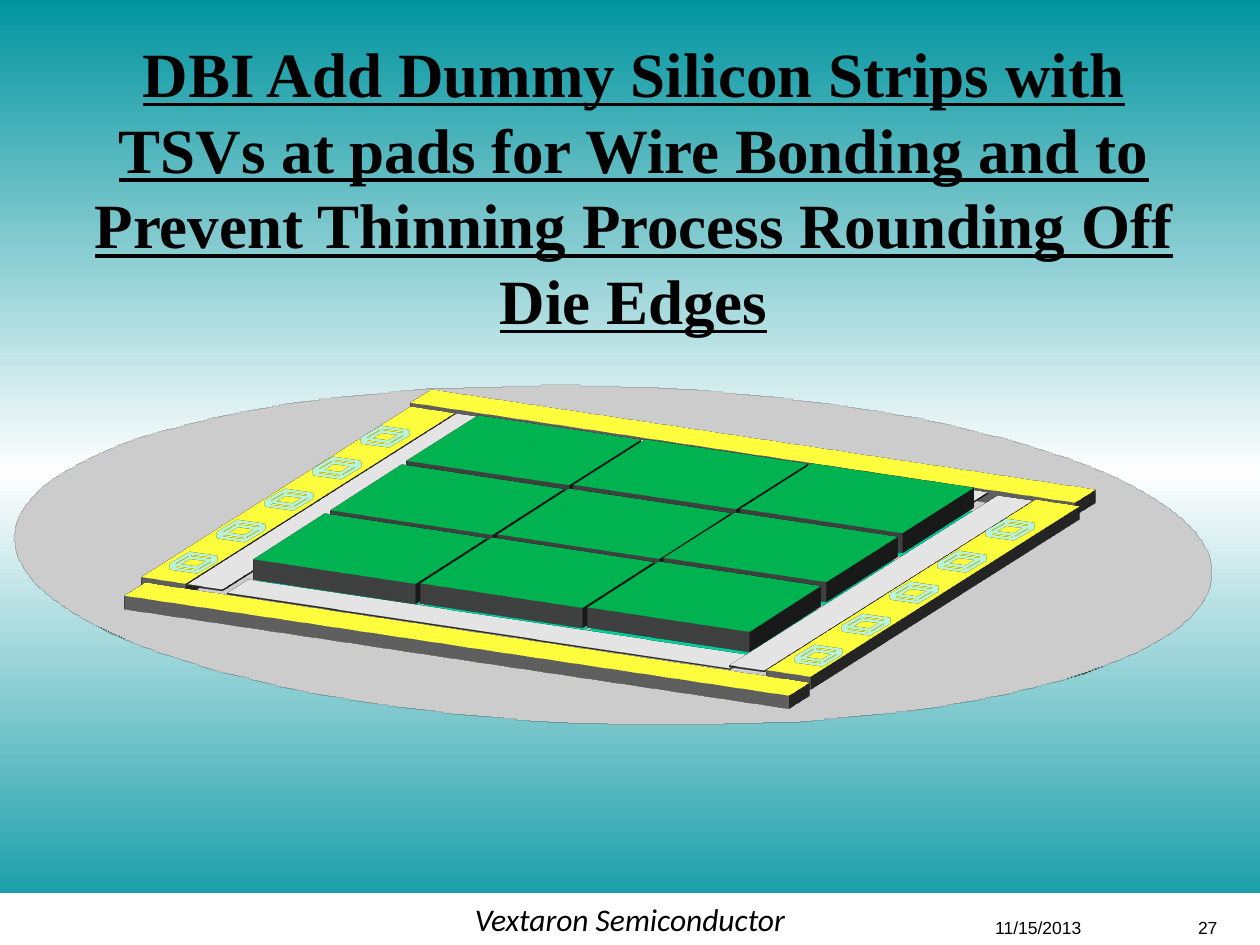
from lxml import etree
from copy import deepcopy

from pptx import Presentation
from pptx.dml.color import RGBColor
from pptx.enum import shapes, text
from pptx.oxml.ns import qn
from pptx.util import Inches, Pt

TEAL = RGBColor(0x01, 0x94, 0x9F)
WHITE = RGBColor(0xFF, 0xFF, 0xFF)
BLACK = RGBColor(0, 0, 0)
WAFER = RGBColor(0xC9, 0xC9, 0xC9)
YELLOW = RGBColor(0xFF, 0xFF, 0x00)
AMBER = RGBColor(0xFF, 0xC0, 0x00)
SILVER = RGBColor(0xBF, 0xBF, 0xBF)
SPACER = RGBColor(0xA6, 0xA6, 0xA6)
SPACER_EDGE = RGBColor(0x59, 0x59, 0x59)
GREEN = RGBColor(0x00, 0xB0, 0x50)
GREEN_EDGE = RGBColor(0x80, 0x80, 0x80)
BOND = RGBColor(0x00, 0xCC, 0x99)
BOND_EDGE = RGBColor(0x00, 0x97, 0x71)
PAD_EDGE = RGBColor(0xBA, 0xF5, 0xDA)


def slab(slide, box, fill, edge, depth=0, material="matte",
         preset=shapes.MSO_SHAPE.RECTANGLE):
    body = slide.shapes.add_shape(preset, *map(Inches, box))
    body.shadow.inherit = False
    body.fill.solid()
    body.fill.fore_color.rgb = fill
    body.line.color.rgb = edge
    body.line.width = Pt(2)
    properties = body.element.spPr
    scene = etree.SubElement(properties, qn("a:scene3d"))
    etree.SubElement(scene, qn("a:camera"), prst="isometricOffAxis2Top")
    etree.SubElement(scene, qn("a:lightRig"), rig="threePt", dir="t")
    solid = etree.SubElement(properties, qn("a:sp3d"), extrusionH=str(Pt(depth)),
                             prstMaterial=material)
    color = etree.SubElement(solid, qn("a:extrusionClr"))
    etree.SubElement(color, qn("a:srgbClr"), val=str(edge))


def strip(slide, box, color=YELLOW):
    slab(slide, box, color, SILVER, 8, "plastic")


def spacer(slide, box):
    slab(slide, box, SPACER, SPACER_EDGE, 1, "plastic")


def padded_strip(slide, box):
    strip(slide, box, AMBER)
    left, top = box[:2]
    for index in range(5):
        pad = (left + 0.76 - 0.38 * index, top + 1.76 + 0.25 * index, 0.25, 0.37)
        slab(slide, pad, SILVER, PAD_EDGE, 3, "legacyWireframe")


def die_column(slide, left, top):
    for row in range(3):
        x, y = left - 0.61 * row, top + 0.39 * row
        slab(slide, (x, y + 0.19, 1.43, 1.29), BOND, BOND_EDGE)
        slab(slide, (x, y, 1.43, 1.29), GREEN, GREEN_EDGE, 12)


def assembly(slide, left, top):
    slab(slide, (left, top, 9.74, 8.5), WAFER, BOND_EDGE,
         preset=shapes.MSO_SHAPE.OVAL)
    strip(slide, (left + 3.04, top + 3.19, 5.87, 0.38))
    padded_strip(slide, (left + 2.17, top + 1.34, 0.39, 4.85))
    spacer(slide, (left + 2.54, top + 1.39, 0.31, 4.85))
    spacer(slide, (left + 3.55, top + 3.31, 4.43, 0.38))
    for column in range(3):
        die_column(slide, left + 3.44 + 1.325 * column, top + 2.77 + 0.19 * column)
    spacer(slide, (left + 1.66, top + 4.6, 4.44, 0.38))
    spacer(slide, (left + 6.84, top + 2.04, 0.31, 4.85))
    padded_strip(slide, (left + 7.13, top + 2.08, 0.39, 4.85))
    strip(slide, (left + 0.77, top + 4.72, 5.87, 0.38))


def background(slide):
    fill = slide.background.fill
    fill.gradient()
    fill.gradient_angle = 90
    for stop in fill.gradient_stops:
        stop.color.rgb = TEAL
    first = slide.element.xpath(".//p:bg//a:gs")[0]
    first.addnext(deepcopy(first))
    middle = fill.gradient_stops[1]
    middle.position = 0.5
    middle.color.rgb = WHITE


def heading(slide, left, top, width, height):
    title = slide.shapes.title
    title.left, title.top = Inches(left), Inches(top)
    title.width, title.height = Inches(width), Inches(height)
    frame = title.text_frame
    frame.text = ("DBI Add Dummy Silicon Strips with TSVs at pads for Wire Bonding "
                  "and to Prevent Thinning Process Rounding Off Die Edges")
    frame.word_wrap = True
    frame.auto_size = text.MSO_AUTO_SIZE.NONE
    frame.vertical_anchor = text.MSO_ANCHOR.MIDDLE
    paragraph = frame.paragraphs[0]
    paragraph.alignment = text.PP_ALIGN.CENTER
    font = paragraph.font
    font.name, font.size = "Times New Roman", Pt(36)
    font.bold = font.underline = True
    font.color.rgb = BLACK


def footer(slide, left, top, width, height):
    bar = slide.shapes.add_shape(shapes.MSO_SHAPE.RECTANGLE, Inches(left), Inches(top),
                                 Inches(width), Inches(height))
    bar.shadow.inherit = False
    bar.fill.solid()
    bar.fill.fore_color.rgb = bar.line.color.rgb = WHITE
    bar.line.width = Pt(0.75)
    bar.text_frame.text = "Vextaron Semiconductor"
    company = bar.text_frame.paragraphs[0]
    company.alignment = text.PP_ALIGN.CENTER
    company.font.name, company.font.size = "Calibri", Pt(18)
    company.font.italic = True
    company.font.color.rgb = BLACK

    date_box = slide.shapes.add_textbox(Inches(left + 6.81), Inches(top + 0.14),
                                        Inches(3.19), Inches(0.27))
    date_box.text_frame.word_wrap = True
    date_box.text_frame.text = "\t11/15/2013\t27"
    date = date_box.text_frame.paragraphs[0]
    tabs = etree.SubElement(date._p.get_or_add_pPr(), qn("a:tabLst"))
    for position in (0.99, 2.6):
        etree.SubElement(tabs, qn("a:tab"), pos=str(Inches(position)), algn="l")
    date.font.name, date.font.size = "Arial", Pt(10)
    date.font.color.rgb = BLACK


def main():
    deck = Presentation()
    deck.slide_width, deck.slide_height = Inches(10), Inches(7.5)
    slide = deck.slides.add_slide(deck.slide_layouts[5])
    background(slide)
    footer(slide, 0, 7.09, 10, 0.41)
    assembly(slide, 0, 0.16)
    heading(slide, 0.53, 0.85, 9, 1.25)
    deck.save("out.pptx")


if __name__ == "__main__":
    main()
